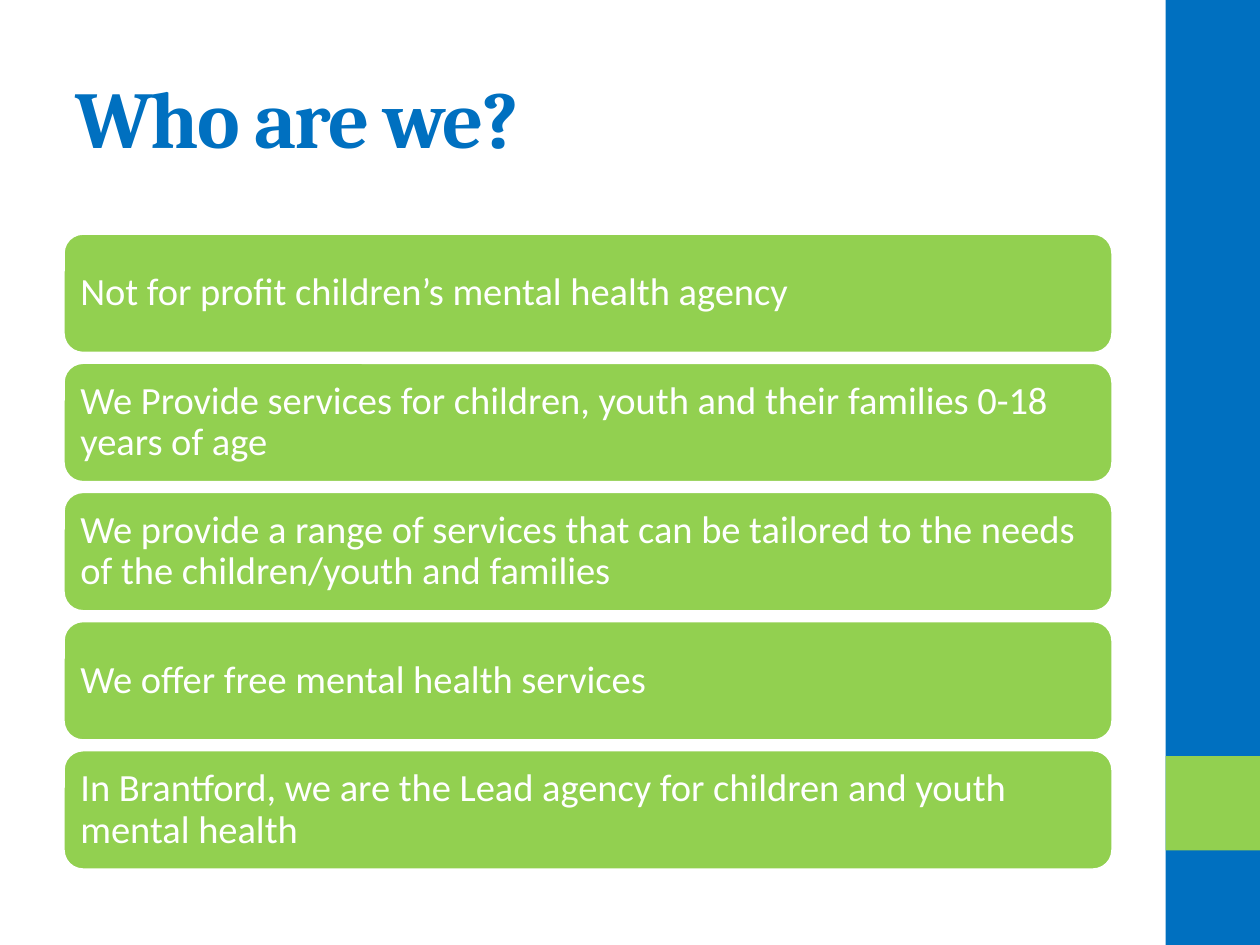
from pptx import Presentation
from pptx.dml.color import RGBColor
from pptx.enum.shapes import MSO_SHAPE
from pptx.enum.text import MSO_ANCHOR, PP_ALIGN
from pptx.util import Pt

BLUE, GREEN, WHITE = "0070C0", "92D050", "FFFFFF"
TITLE_FONT = {"name": "Cambria", "size": Pt(46), "bold": True}
BODY_FONT = {"name": "Calibri", "size": Pt(22), "bold": False}
STATEMENTS = [
    "Not for profit children’s mental health agency",
    "We Provide services for children, youth and their families 0-18 years of age",
    "We provide a range of services that can be tailored to the needs of the children/youth and families",
    "We offer free mental health services",
    "In Brantford, we are the Lead agency for children and youth mental health",
]


def add_filled_shape(kind, left, top, width, height, color):
    shape = slide.shapes.add_shape(kind, Pt(left), Pt(top), Pt(width), Pt(height))
    shape.shadow.inherit = False
    shape.fill.solid()
    shape.fill.fore_color.rgb = RGBColor.from_string(color)
    shape.line.fill.background()
    return shape


def write_text(shape, text, font_format, color):
    """Fill the shape with one left-aligned, vertically centred paragraph."""
    frame = shape.text_frame
    frame.word_wrap = True
    frame.vertical_anchor = MSO_ANCHOR.MIDDLE
    paragraph = frame.paragraphs[0]
    paragraph.alignment = PP_ALIGN.LEFT
    paragraph.line_spacing = 0.9
    run = paragraph.add_run()
    run.text = text
    for name, value in font_format.items():
        setattr(run.font, name, value)
    run.font.color.rgb = RGBColor.from_string(color)
    return run


presentation = Presentation()
presentation.slide_width, presentation.slide_height = Pt(720), Pt(540)
slide = presentation.slides.add_slide(presentation.slide_layouts[5])

# Side band with its accent square
add_filled_shape(MSO_SHAPE.RECTANGLE, 666, 0, 54, 540, BLUE)
add_filled_shape(MSO_SHAPE.RECTANGLE, 666, 432, 54, 54, GREEN)

# Title
title = slide.shapes.title
title.left, title.top, title.width, title.height = Pt(36), Pt(21.6), Pt(600), Pt(90)
title_run = write_text(title, "Who are we?", TITLE_FONT, BLUE)
title.text_frame.paragraphs[0].line_spacing = 1
title_run.font._element.set("spc", "-100")

# Stack of statement bars
first_top, bar_height, pitch = 133.2, 68.8, 73.8
for index, statement in enumerate(STATEMENTS):
    bar = add_filled_shape(MSO_SHAPE.ROUNDED_RECTANGLE, 36, first_top + index * pitch,
                           600, bar_height, GREEN)
    bar.line.color.rgb = RGBColor.from_string(WHITE)
    bar.line.width = Pt(2)
    frame = bar.text_frame
    for side in ("left", "top", "right", "bottom"):
        setattr(frame, f"margin_{side}", Pt(6.6))
    write_text(bar, statement, BODY_FONT, WHITE)

presentation.save("out.pptx")
